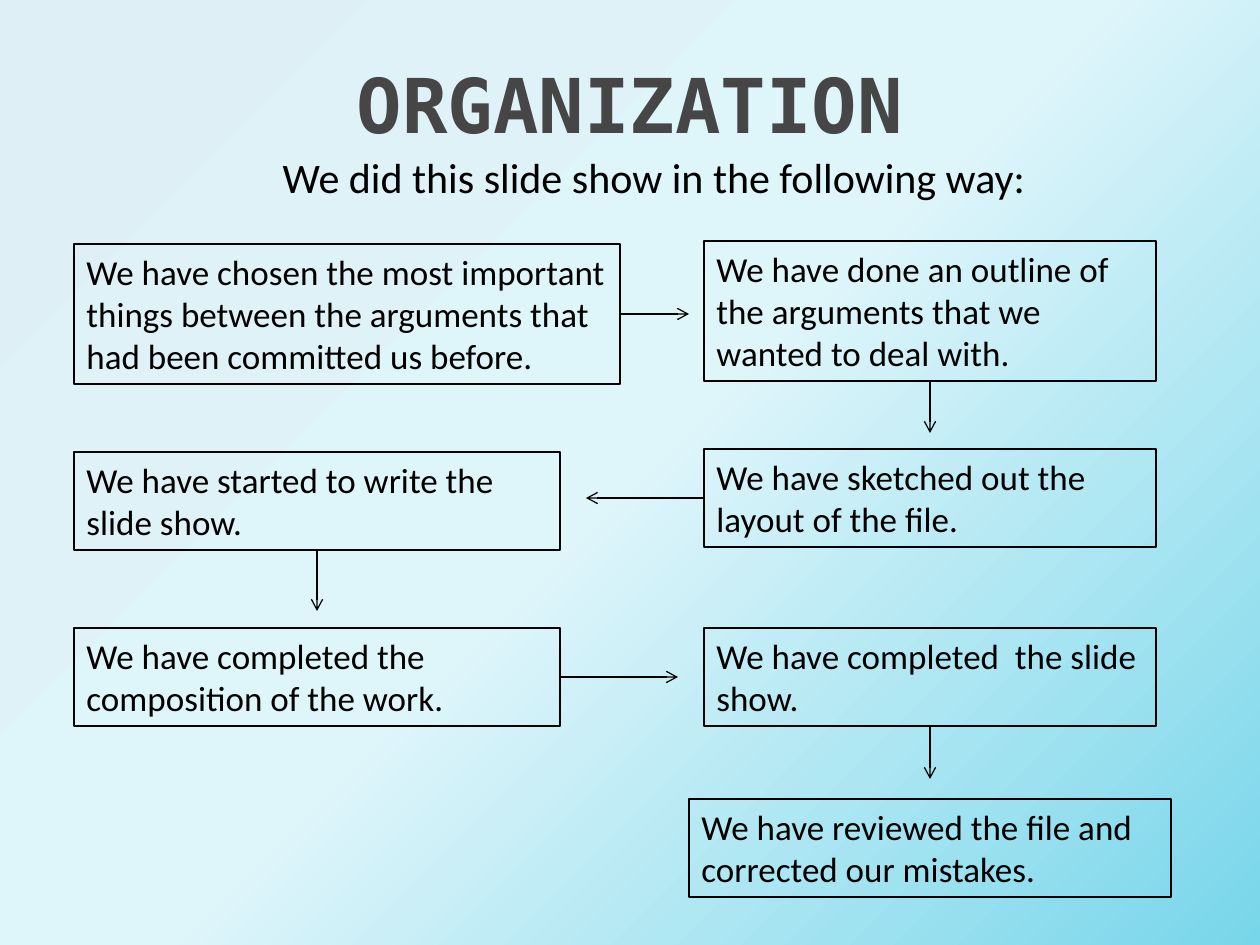
from copy import deepcopy

from lxml import etree
from pptx import Presentation
from pptx.dml.color import RGBColor
from pptx.enum.shapes import MSO_CONNECTOR, MSO_SHAPE
from pptx.enum.text import MSO_ANCHOR, MSO_AUTO_SIZE, PP_ALIGN
from pptx.oxml.ns import qn
from pptx.util import Pt

COLORS = {"ink": "000000", "title": "464646",
          "deep": "78D6EA", "pale": "DEF5FA", "mist": "DFEFF6"}
GRADIENT = [(0, "deep"), (0.5, "pale"), (1, "mist")]

# text, place (left, top, width, height), font, size, bold, color, frame format
HEADINGS = [
    ("ORGANIZATION", (94, 45, 1072, 110), "DejaVu Sans Mono", 43.2, True, "title",
     {"vertical_anchor": MSO_ANCHOR.BOTTOM}),
    ("We did this slide show in the following way:", (74, 145, 1160, 79),
     "Calibri", 24, False, "ink",
     dict.fromkeys(("margin_left", "margin_top", "margin_right", "margin_bottom"), Pt(3.6))),
]

# text, place, arrow to the next step (direction, length)
STEPS = [
    ("We have chosen the most important things between the arguments that "
     "had been committed us before.", (74, 244, 546, 140), ("right", 69)),
    ("We have done an outline of the arguments that we wanted to deal with.",
     (704, 241, 452, 140), ("down", 52)),
    ("We have sketched out the layout of the file.", (704, 449, 452, 98), ("left", 118)),
    ("We have started to write the slide show.", (74, 452, 486, 98), ("down", 61)),
    ("We have completed the composition of the work.", (74, 628, 486, 98), ("right", 118)),
    ("We have completed  the slide show.", (704, 628, 452, 98), ("down", 53)),
    ("We have reviewed the file and corrected our mistakes.", (689, 799, 482, 98), None),
]

# direction: (connection site, x step, y step)
DIRECTIONS = {"left": (1, -1, 0), "down": (2, 0, 1), "right": (3, 1, 0)}


def px(value):
    return round(value * 914400 / 126)


def color(name):
    return RGBColor.from_string(COLORS[name])


def write(box, text, font, size, bold, ink, align, frame_format):
    frame = box.text_frame
    for name, value in {"word_wrap": True, **frame_format}.items():
        setattr(frame, name, value)
    para = frame.paragraphs[0]
    para.alignment = align
    span = para.add_run()
    span.text = text
    for name, value in {"name": font, "size": Pt(size), "bold": bold}.items():
        setattr(span.font, name, value)
    span.font.color.rgb = color(ink)


def outline(shape):
    shape.line.color.rgb = color("ink")
    shape.line.width = Pt(0.75)


def paint_background(page):
    fill = page.background.fill
    fill.gradient()
    fill.gradient_angle = 135
    first = fill.gradient_stops[0]
    stop_list = page.background._cSld.find(".//" + qn("a:gsLst"))
    stop_list.append(deepcopy(stop_list[0]))
    for stop, (position, name) in zip(fill.gradient_stops, GRADIENT):
        stop.position = position
        stop.color.rgb = color(name)


def add_step(page, text, place):
    box = page.shapes.add_shape(MSO_SHAPE.RECTANGLE, *map(px, place))
    box.shadow.inherit = False
    box.fill.background()
    outline(box)
    write(box, text, "Calibri", 20, False, "ink", PP_ALIGN.LEFT,
          {"vertical_anchor": MSO_ANCHOR.TOP, "auto_size": MSO_AUTO_SIZE.SHAPE_TO_FIT_TEXT})
    return box


def add_arrow(page, box, place, direction, length):
    """Draw an arrow from the middle of the box's side."""
    left, top, width, height = place
    site, step_x, step_y = DIRECTIONS[direction]
    start_x = left + width / 2 * (1 + step_x)
    start_y = top + height / 2 * (1 + step_y)
    arrow = page.shapes.add_connector(
        MSO_CONNECTOR.STRAIGHT, px(start_x), px(start_y),
        px(start_x + step_x * length), px(start_y + step_y * length))
    arrow.begin_connect(box, site)
    outline(arrow)
    etree.SubElement(arrow.line._get_or_add_ln(), qn("a:tailEnd"), type="arrow")
    etree.SubElement(arrow._element.spPr, qn("a:effectLst"))


def main():
    deck = Presentation()
    deck.slide_width, deck.slide_height = px(1260), px(945)
    page = deck.slides.add_slide(deck.slide_layouts[6])
    paint_background(page)
    for text, place, font, size, bold, ink, frame_format in HEADINGS:
        box = page.shapes.add_textbox(*map(px, place))
        write(box, text, font, size, bold, ink, PP_ALIGN.CENTER, frame_format)
    boxes = [add_step(page, text, place) for text, place, _ in STEPS]
    for box, (_, place, arrow) in zip(boxes, STEPS):
        if arrow:
            add_arrow(page, box, place, *arrow)
    deck.save("out.pptx")


if __name__ == "__main__":
    main()
